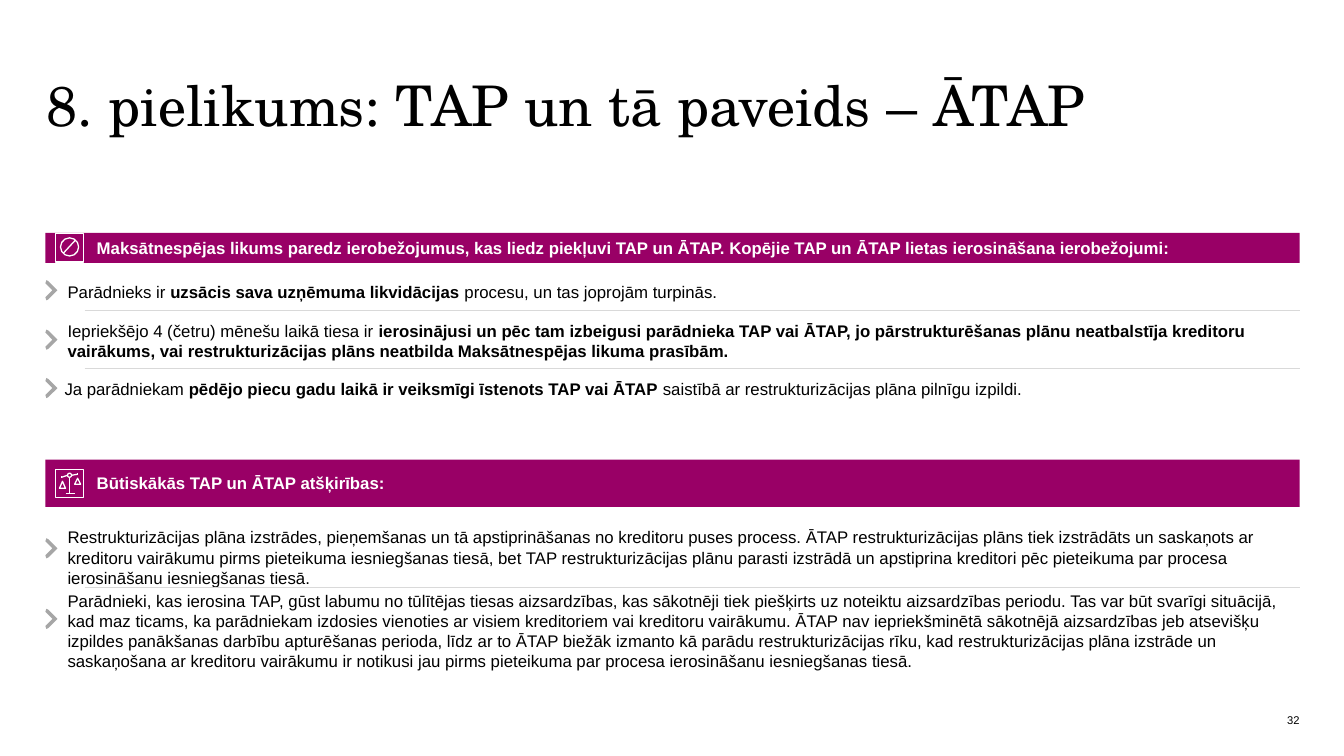
from lxml import etree
from pptx import Presentation
from pptx.dml.color import RGBColor
from pptx.enum.shapes import MSO_CONNECTOR, MSO_SHAPE
from pptx.enum.text import MSO_ANCHOR, PP_ALIGN
from pptx.oxml.ns import qn
from pptx.util import Inches, Pt

RECT, OVAL = MSO_SHAPE.RECTANGLE, MSO_SHAPE.OVAL
TRIANGLE = MSO_SHAPE.ISOSCELES_TRIANGLE
STRAIGHT = MSO_CONNECTOR.STRAIGHT
MIDDLE, TOP = MSO_ANCHOR.MIDDLE, MSO_ANCHOR.TOP
LEFT, RIGHT = PP_ALIGN.LEFT, PP_ALIGN.RIGHT

COLORS = {"text": "000000", "white": "FFFFFF", "band": "990066",
          "chevron": "A6A6A6", "rule": "D9D9D9"}
MARGIN, WIDTH = 0.45, 12.44
ICON = 0.28
CHEVRON = [(0, 0.03), (0.01, 0), (0.03, 0.01), (0.12, 0.1), (0.03, 0.19),
           (0.01, 0.2), (0, 0.17), (0.07, 0.1)]

# Each item: left, top, height, chevron top, runs as (text, bold)
LIMITS = [
    (0.67, 2.8, 0.2, 2.78, [
        ("Parādnieks ir ", False),
        ("uzsācis sava uzņēmuma likvidācijas", True),
        (" procesu, un tas joprojām turpinās.", False)]),
    (0.67, 3.18, 0.4, 3.27, [
        ("Iepriekšējo 4 (četru) mēnešu laikā tiesa ir ", False),
        ("ierosinājusi un pēc tam izbeigusi parādnieka TAP vai ĀTAP, jo "
         "pārstrukturēšanas plānu neatbalstīja kreditoru vairākums, vai "
         "restrukturizācijas plāns neatbilda Maksātnespējas likuma prasībām.", True)]),
    (0.64, 3.76, 0.2, 3.75, [
        ("Ja parādniekam ", False),
        ("pēdējo piecu gadu laikā ir veiksmīgi īstenots TAP vai ĀTAP ", True),
        ("saistībā ar restrukturizācijas plāna pilnīgu izpildi.", False)]),
]
DIFFERENCES = [
    (0.67, 5.23, 0.61, 5.34, [
        ("Restrukturizācijas plāna izstrādes, pieņemšanas un tā apstiprināšanas no "
         "kreditoru puses process. ĀTAP restrukturizācijas plāns tiek izstrādāts un "
         "saskaņots ar kreditoru vairākumu pirms pieteikuma iesniegšanas tiesā, bet "
         "TAP restrukturizācijas plānu parasti izstrādā un apstiprina kreditori pēc "
         "pieteikuma par procesa ierosināšanu iesniegšanas tiesā.", False)]),
    (0.67, 5.86, 0.81, 6.04, [
        ("Parādnieki, kas ierosina TAP, gūst labumu no tūlītējas tiesas aizsardzības, "
         "kas sākotnēji tiek piešķirts uz noteiktu aizsardzības periodu. Tas var būt "
         "svarīgi situācijā, kad maz ticams, ka parādniekam izdosies vienoties ar "
         "visiem kreditoriem vai kreditoru vairākumu. ĀTAP nav iepriekšminētā "
         "sākotnējā aizsardzības jeb atsevišķu izpildes panākšanas darbību "
         "apturēšanas perioda, līdz ar to ĀTAP biežāk izmanto kā parādu "
         "restrukturizācijas rīku, kad restrukturizācijas plāna izstrāde un "
         "saskaņošana ar kreditoru vairākumu ir notikusi jau pirms pieteikuma par "
         "procesa ierosināšanu iesniegšanas tiesā.", False)]),
]


def rgb(name):
    return RGBColor.from_string(COLORS[name])


def set_margins(tf, *sides):
    tf.margin_left, tf.margin_top, tf.margin_right, tf.margin_bottom = map(Inches, sides)


def style(font, size, color="text", bold=False, name="Arial"):
    font.name, font.size, font.bold = name, Pt(size), bold
    font.color.rgb = rgb(color)


def add_text(s, x, y, w, h, runs, size=12, align=LEFT, anchor=TOP):
    tf = s.shapes.add_textbox(*map(Inches, (x, y, w, h))).text_frame
    tf.word_wrap = True
    tf.vertical_anchor = anchor
    set_margins(tf, 0, 0, 0, 0)
    p = tf.paragraphs[0]
    p.alignment = align
    for text, bold in runs:
        r = p.add_run()
        r.text = text
        style(r.font, size, bold=bold)


def add_line(s, x1, y1, x2, y2, color, width):
    line = s.shapes.add_connector(STRAIGHT, *map(Inches, (x1, y1, x2, y2)))
    line.line.color.rgb = rgb(color)
    line.line.width = Pt(width)
    etree.SubElement(line._element.spPr, qn("a:effectLst"))


def add_outline(s, kind, x, y, w, h):
    sp = s.shapes.add_shape(kind, *map(Inches, (x, y, w, h)))
    sp.shadow.inherit = False
    sp.fill.background()
    sp.line.color.rgb = rgb("white")
    sp.line.width = Pt(0.9)


def add_ban_icon(s, x, y):
    add_outline(s, RECT, x, y, ICON, ICON)
    add_outline(s, OVAL, x + 0.05, y + 0.04, 0.18, 0.18)
    add_line(s, x + 0.08, y + 0.19, x + 0.2, y + 0.06, "white", 0.9)


def add_scales_icon(s, x, y):
    add_outline(s, RECT, x, y, ICON, ICON)
    add_outline(s, TRIANGLE, x + 0.04, y + 0.12, 0.06, 0.07)
    add_outline(s, TRIANGLE, x + 0.19, y + 0.09, 0.06, 0.06)
    add_outline(s, OVAL, x + 0.12, y + 0.04, 0.04, 0.04)
    for x1, y1, x2, y2 in [(0.14, 0.08, 0.14, 0.24), (0.1, 0.24, 0.19, 0.24),
                           (0.06, 0.08, 0.12, 0.06), (0.16, 0.06, 0.22, 0.05),
                           (0.06, 0.07, 0.06, 0.09), (0.22, 0.04, 0.22, 0.06)]:
        add_line(s, x + x1, y + y1, x + x2, y + y2, "white", 0.9)


def add_band(s, y, h, text, add_icon):
    band = s.shapes.add_shape(RECT, *map(Inches, (MARGIN, y, WIDTH, h)))
    band.shadow.inherit = False
    band.fill.solid()
    band.fill.fore_color.rgb = rgb("band")
    band.line.fill.background()
    tf = band.text_frame
    tf.text = text
    tf.word_wrap = True
    tf.vertical_anchor = MIDDLE
    set_margins(tf, 0.51, 0.05, 0.1, 0.05)
    tf.paragraphs[0].alignment = LEFT
    style(tf.paragraphs[0].runs[0].font, 12, "white", True)
    add_icon(s, MARGIN + 0.1, y + (h - ICON) / 2)


def add_chevron(s, x, y):
    points = [(Inches(x + dx), Inches(y + dy)) for dx, dy in CHEVRON]
    builder = s.shapes.build_freeform(*points[0])
    builder.add_line_segments(points[1:])
    sp = builder.convert_to_shape()
    sp.shadow.inherit = False
    sp.fill.solid()
    sp.fill.fore_color.rgb = rgb("chevron")
    sp.line.fill.background()


def add_items(s, items, rules):
    for x, y, h, chevron_y, runs in items:
        add_text(s, x, y, 12.04, h, runs)
        add_chevron(s, MARGIN, chevron_y)
    for y in rules:
        add_line(s, 0.84, y, MARGIN + WIDTH, y, "rule", 0.5)


def add_title(s, text):
    title = s.shapes.title
    title.left, title.top, title.width, title.height = map(Inches, (0.46, 0.36, 12.43, 1.44))
    tf = title.text_frame
    tf.text = text
    tf.word_wrap = True
    tf.vertical_anchor = MIDDLE
    set_margins(tf, 0, 0, 0, 0)
    p = tf.paragraphs[0]
    p.alignment, p.line_spacing = LEFT, 0.9
    style(p.runs[0].font, 40, name="TeX Gyre Schola")


def main():
    prs = Presentation()
    prs.slide_width, prs.slide_height = Inches(13.33), Inches(7.5)
    s = prs.slides.add_slide(prs.slide_layouts[5])
    add_title(s, "8. pielikums: TAP un tā paveids – ĀTAP")
    add_band(s, 2.31, 0.3, "Maksātnespējas likums paredz ierobežojumus, kas liedz piekļuvi "
             "TAP un ĀTAP. Kopējie TAP un ĀTAP lietas ierosināšana ierobežojumi:", add_ban_icon)
    add_items(s, LIMITS, [3.08, 3.65])
    add_band(s, 4.56, 0.47, "Būtiskākās TAP un ĀTAP atšķirības:", add_scales_icon)
    add_items(s, DIFFERENCES, [5.83])
    add_text(s, 9.89, 7.08, 3, 0.13, [("32", False)], size=8, align=RIGHT, anchor=MIDDLE)
    prs.save("out.pptx")


if __name__ == "__main__":
    main()
